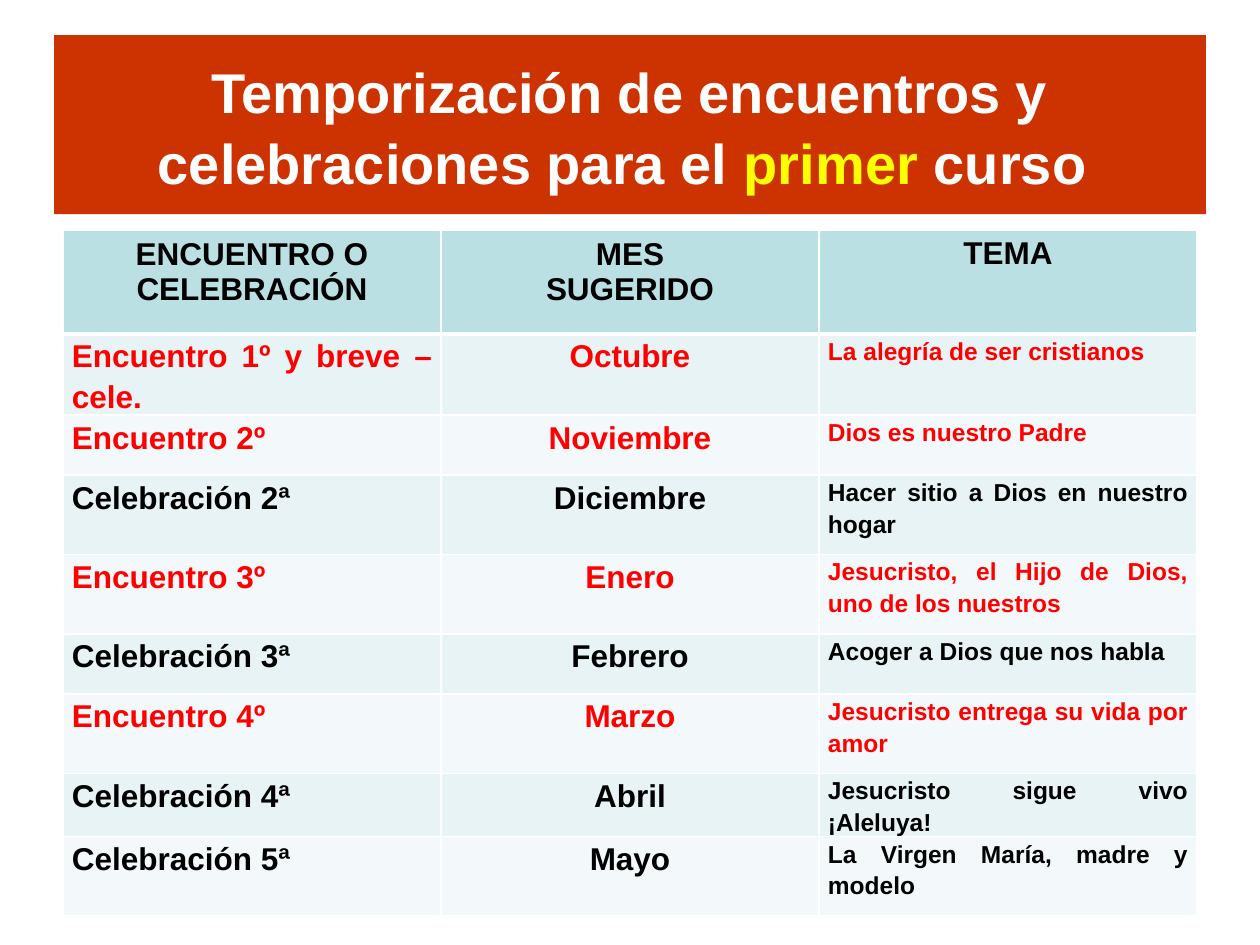
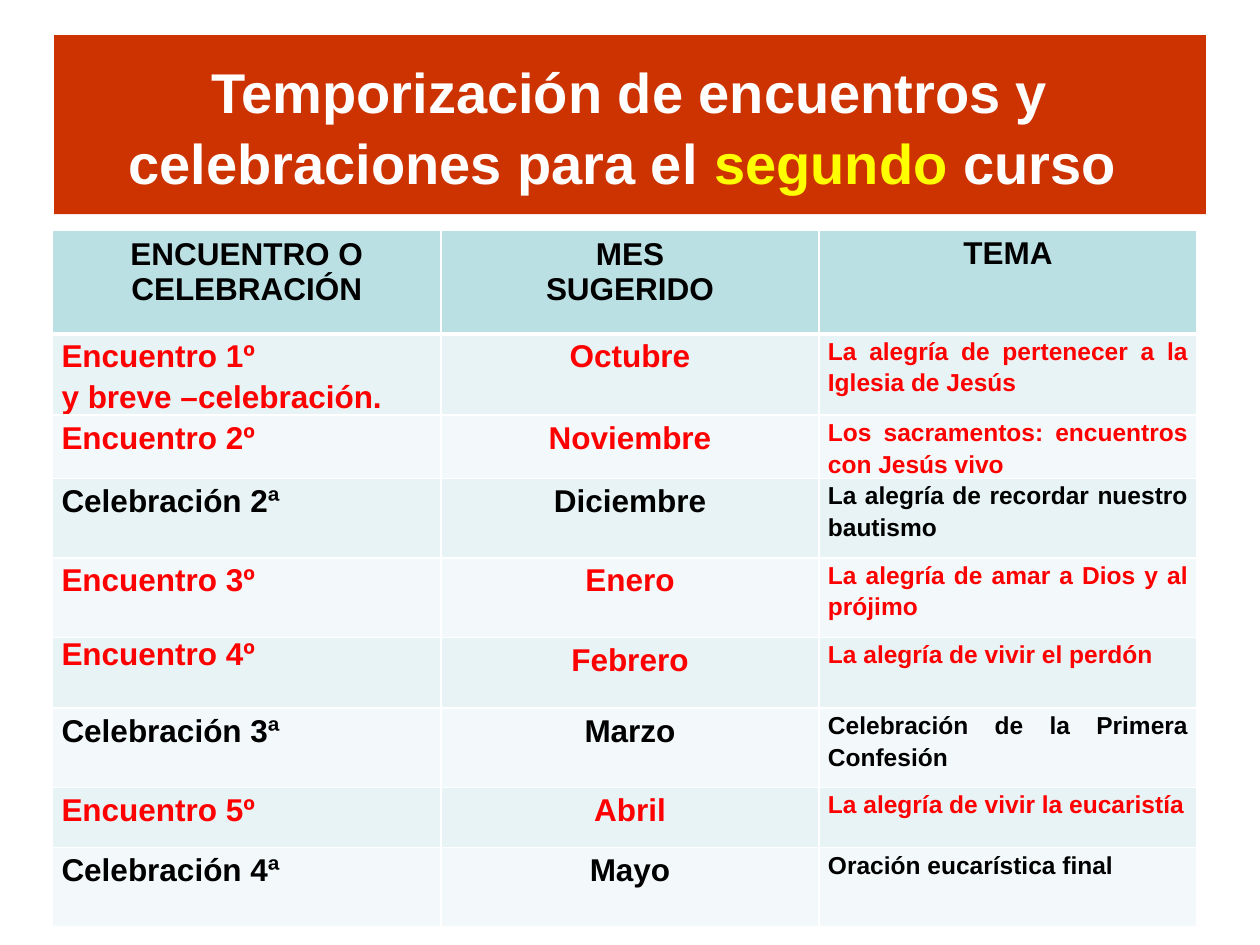
import pptx
import pptx.dml.color
import pptx.enum.text
import pptx.oxml
import pptx.oxml.ns
import pptx.util

Cm = pptx.util.Cm
ALIGN = pptx.enum.text.PP_ALIGN
COLOURS = {"band": "CC3300", "title": "FFFFFF", "accent": "FFFF00", "header": "BBE0E3",
           "odd": "E7F3F4", "even": "F3F9FA", "line": "FFFFFF",
           "encounter": "FF0000", "celebration": "000000"}
TITLE_BOX = (1.09, 0.71, 23.22, 3.61)
TABLE_TOP = 4.65
TABLE_RIGHT = 24.13
COLUMN_WIDTH = 7.62
HEADERS = ["ENCUENTRO O\nCELEBRACIÓN", "MES\nSUGERIDO", "TEMA"]
MONTHS = ["Octubre", "Noviembre", "Diciembre", "Enero", "Febrero", "Marzo", "Abril", "Mayo"]
TIGHT = {"margin_left": Cm(0.18), "margin_right": Cm(0.18), "margin_top": 0, "margin_bottom": 0}

COURSES = [
    {"name": "primer", "first_width": 7.62,
     "heights": [2.08, 1.64, 1.21, 1.6, 1.6, 1.21, 1.6, 1.27, 1.6],
     "sessions": [
         ("Encuentro 1º y breve –cele.", "La alegría de ser cristianos"),
         ("Encuentro 2º", "Dios es nuestro Padre"),
         ("Celebración 2ª", "Hacer sitio a Dios en nuestro hogar"),
         ("Encuentro 3º", "Jesucristo, el Hijo de Dios, uno de los nuestros"),
         ("Celebración 3ª", "Acoger a Dios que nos habla"),
         ("Encuentro 4º", "Jesucristo entrega su vida por amor"),
         ("Celebración 4ª", "Jesucristo sigue vivo ¡Aleluya!"),
         ("Celebración 5ª", "La Virgen María, madre y modelo")]},
    {"name": "segundo", "first_width": 7.83,
     "heights": [2.08, 1.64, 1.27, 1.6, 1.6, 1.43, 1.6, 1.21, 1.6],
     "single_spaced": "Encuentro 4º",
     "sessions": [
         ("Encuentro 1º\ny breve –celebración.", "La alegría de pertenecer a la Iglesia de Jesús"),
         ("Encuentro 2º", "Los sacramentos: encuentros con Jesús vivo"),
         ("Celebración 2ª", "La alegría de recordar nuestro bautismo"),
         ("Encuentro 3º", "La alegría de amar a Dios y al prójimo"),
         ("Encuentro 4º", "La alegría de vivir el perdón"),
         ("Celebración 3ª", "Celebración de la Primera Confesión"),
         ("Encuentro 5º", "La alegría de vivir la eucaristía"),
         ("Celebración 4ª", "Oración eucarística final")]},
]


def colour(hex_value):
    """Turn a hex string into a colour."""
    return pptx.dml.color.RGBColor.from_string(hex_value)


def apply_format(target, values):
    """Set each named attribute on the target."""
    for name, value in values.items():
        setattr(target, name, value)


def paint(target, hex_value):
    """Give a shape or cell a solid fill."""
    target.fill.solid()
    target.fill.fore_color.rgb = colour(hex_value)


def style_font(font, size, hex_value):
    """Apply the deck's bold typeface with a size and colour."""
    apply_format(font, {"name": "Arial", "size": pptx.util.Pt(size), "bold": True})
    font.color.rgb = colour(hex_value)


def draw_borders(cell, widths):
    """Draw the cell's borders, with a width in points for each side."""
    properties = cell._tc.get_or_add_tcPr()
    for side, width in widths.items():
        properties.append(pptx.oxml.parse_xml(
            f'<a:ln{side} {pptx.oxml.ns.nsdecls("a")} w="{pptx.util.Pt(width)}">'
            f'<a:solidFill><a:srgbClr val="{COLOURS["line"]}"/></a:solidFill></a:ln{side}>'))


def fill_cell(cell, text, size, ink, align, spacing):
    """Write a cell's paragraphs and format them."""
    cell.text_frame.text = text
    for para in cell.text_frame.paragraphs:
        apply_format(para, {"alignment": align, "line_spacing": spacing})
        for span in para.runs:
            style_font(span.font, size, ink)


def add_title(page, box, course_name):
    """Place the title band and highlight the course name."""
    title = page.shapes.title
    apply_format(title, dict(zip(("left", "top", "width", "height"), map(Cm, box))))
    paint(title, COLOURS["band"])
    frame = title.text_frame
    apply_format(frame, {"word_wrap": True, "auto_size": pptx.enum.text.MSO_AUTO_SIZE.NONE,
                         "vertical_anchor": pptx.enum.text.MSO_ANCHOR.MIDDLE})
    para = frame.paragraphs[0]
    apply_format(para, {"alignment": ALIGN.CENTER, "line_spacing": 1.06})
    for text, role in (("Temporización de encuentros y celebraciones para el ", "title"),
                       (course_name, "accent"), (" curso ", "title")):
        span = para.add_run()
        span.text = text
        style_font(span.font, 32, COLOURS[role])


def add_schedule(page, box, course):
    """Place the table of sessions, months and themes."""
    heights = course["heights"]
    table = page.shapes.add_table(len(heights), len(HEADERS), *map(Cm, box)).table
    for column, width in zip(table.columns, (course["first_width"], COLUMN_WIDTH, COLUMN_WIDTH)):
        column.width = Cm(width)
    for row, height in zip(table.rows, heights):
        row.height = Cm(height)

    for index, heading in enumerate(HEADERS):
        cell = table.cell(0, index)
        is_theme = heading == "TEMA"
        if is_theme:
            apply_format(cell, TIGHT)
        draw_borders(cell, {"L": 1, "R": 1, "T": 1, "B": 3})
        paint(cell, COLOURS["header"])
        fill_cell(cell, heading, 18, COLOURS["celebration"], ALIGN.CENTER, 1.15 if is_theme else 1)

    for number, ((session, theme), month) in enumerate(zip(course["sessions"], MONTHS), 1):
        ink = COLOURS["encounter" if session.startswith("Encuentro") else "celebration"]
        single = session == course.get("single_spaced")
        columns = [(session, 18, ALIGN.LEFT if single else ALIGN.JUSTIFY, 1 if single else 1.15),
                   (month, 18, ALIGN.CENTER, 1.15),
                   (theme, 14, ALIGN.JUSTIFY, 1.15)]
        for index, (text, size, align, spacing) in enumerate(columns):
            cell = table.cell(number, index)
            apply_format(cell, TIGHT)
            draw_borders(cell, {"L": 1, "R": 1, "T": 3 if number == 1 else 1, "B": 1})
            paint(cell, COLOURS["odd" if number % 2 else "even"])
            fill_cell(cell, text, size, ink, align, spacing)


def add_course_page(deck, course):
    """Add one course's page with its title and schedule."""
    page = deck.slides.add_slide(deck.slide_layouts[5])
    width = course["first_width"] + 2 * COLUMN_WIDTH
    add_title(page, TITLE_BOX, course["name"])
    add_schedule(page, (TABLE_RIGHT - width, TABLE_TOP, width, sum(course["heights"])), course)


def main():
    """Build and save the deck."""
    deck = pptx.Presentation()
    apply_format(deck, {"slide_width": Cm(25.4), "slide_height": Cm(19.05)})
    for course in COURSES:
        add_course_page(deck, course)
    deck.save("out.pptx")


if __name__ == "__main__":
    main()
